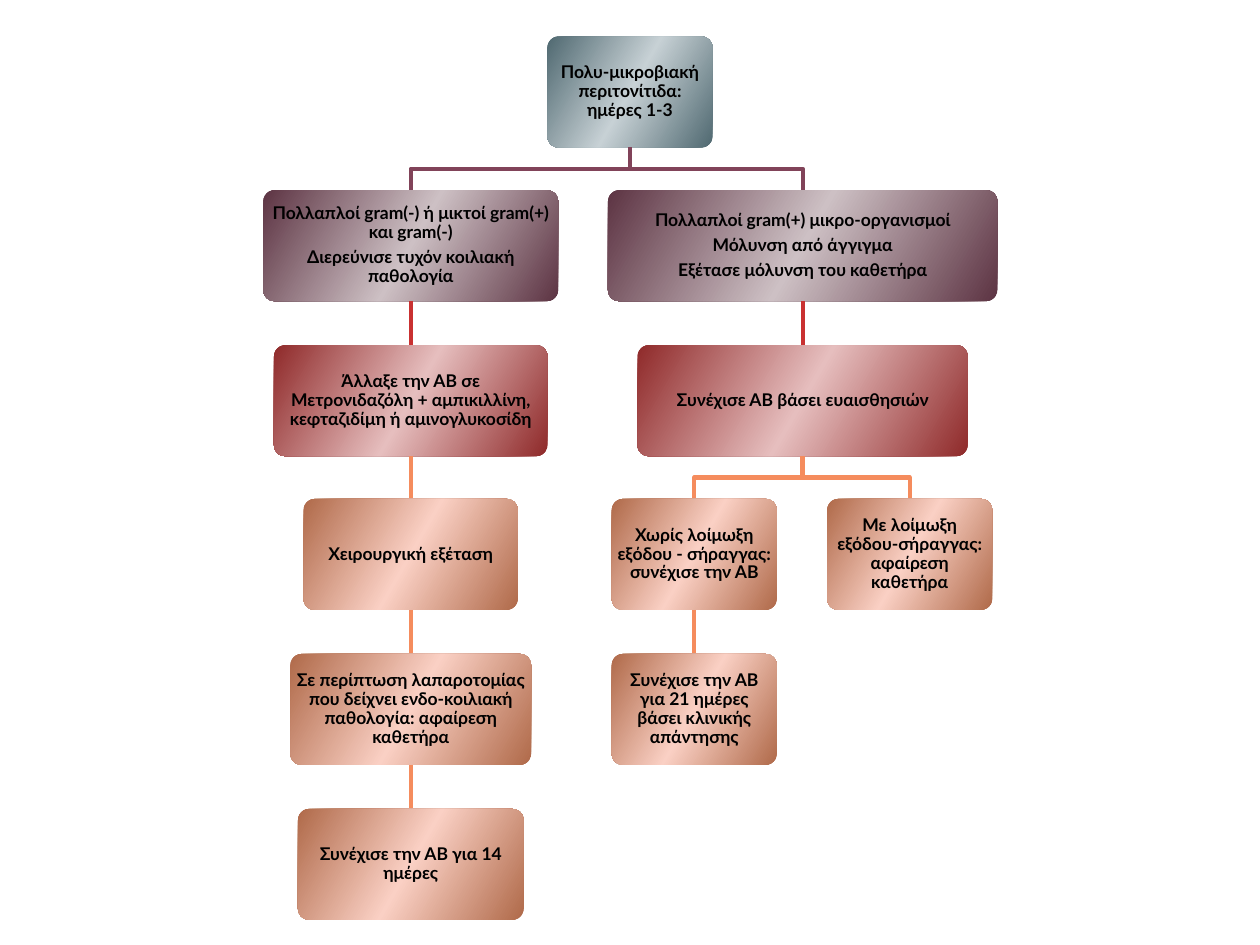
"""Draw the decision tree for polymicrobial peritonitis."""
from copy import deepcopy

from pptx import Presentation
from pptx import util as u
from pptx.dml.color import RGBColor
from pptx.enum import shapes, text
from pptx.oxml.ns import qn

BLACK = RGBColor(0x00, 0x00, 0x00)
TEAL = (RGBColor(0x50, 0x69, 0x71), RGBColor(0xC7, 0xD1, 0xD5))
PLUM = (RGBColor(0x5D, 0x34, 0x43), RGBColor(0xCD, 0xC0, 0xC4))
RED = (RGBColor(0x8F, 0x2A, 0x2A), RGBColor(0xE6, 0xBE, 0xBE))
ORANGE = (RGBColor(0xB0, 0x6A, 0x4A), RGBColor(0xFA, 0xD0, 0xC4))
PLUM_LINE = RGBColor(0x81, 0x43, 0x59)
RED_LINE = RGBColor(0xC9, 0x31, 0x31)
ORANGE_LINE = RGBColor(0xF5, 0x8C, 0x5D)

LEVEL_FILLS = [TEAL, PLUM, RED, ORANGE, ORANGE, ORANGE]
LEVEL_LINES = [None, PLUM_LINE, RED_LINE, ORANGE_LINE, ORANGE_LINE, ORANGE_LINE]

LEVEL_TOPS = [0.29, 1.51, 2.74, 3.96, 5.19, 6.42]
HEIGHT = 0.88
ROOT, LEFT, RIGHT, CLEAR, INFECTED = 5, 3.26, 6.37, 5.51, 7.22
NARROW = 1.31

STEPS = [
    (0, ROOT, NARROW, None, ["Πολυ-μικροβιακή περιτονίτιδα: ημέρες 1-3"]),
    (1, LEFT, 2.34, ROOT, ["Πολλαπλοί gram(-) ή μικτοί gram(+) και gram(-)",
                           "Διερεύνισε τυχόν κοιλιακή παθολογία"]),
    (2, LEFT, 2.17, LEFT, ["Άλλαξε την ΑΒ σε Μετρονιδαζόλη + αμπικιλλίνη, "
                           "κεφταζιδίμη ή αμινογλυκοσίδη"]),
    (3, LEFT, 1.7, LEFT, ["Χειρουργική εξέταση"]),
    (4, LEFT, 1.91, LEFT, ["Σε περίπτωση λαπαροτομίας που δείχνει ενδο-κοιλιακή "
                           "παθολογία: αφαίρεση καθετήρα"]),
    (5, LEFT, 1.79, LEFT, ["Συνέχισε την ΑΒ για 14 ημέρες"]),
    (1, RIGHT, 3.09, ROOT, ["Πολλαπλοί gram(+) μικρο-οργανισμοί",
                            "Μόλυνση από άγγιγμα",
                            "Εξέτασε μόλυνση του καθετήρα"]),
    (2, RIGHT, 2.62, RIGHT, ["Συνέχισε ΑΒ βάσει ευαισθησιών"]),
    (3, CLEAR, NARROW, RIGHT, ["Χωρίς λοίμωξη εξόδου - σήραγγας: συνέχισε την ΑΒ"]),
    (4, CLEAR, NARROW, CLEAR, ["Συνέχισε την ΑΒ για 21 ημέρες βάσει κλινικής απάντησης"]),
    (3, INFECTED, NARROW, RIGHT, ["Με λοίμωξη εξόδου-σήραγγας: αφαίρεση καθετήρα"]),
]


def add_link(page, level, parent, centre):
    start, end = LEVEL_TOPS[level - 1] + HEIGHT, LEVEL_TOPS[level]
    middle = (start + end) / 2
    bends = [] if parent == centre else [(parent, middle), (centre, middle)]
    first, *rest = [(u.Inches(x), u.Inches(y))
                    for x, y in [(parent, start), *bends, (centre, end)]]
    builder = page.shapes.build_freeform(*first)
    builder.add_line_segments(rest, close=False)
    link = builder.convert_to_shape()
    link.shadow.inherit = False
    link.fill.background()
    link.line.color.rgb = LEVEL_LINES[level]
    link.line.width = u.Pt(2.36)


def fill_gradient(box, edge, middle):
    box.fill.gradient()
    box.fill.gradient_angle = 330
    stop_list = box._element.spPr.find(".//" + qn("a:gsLst"))
    stop_list.append(deepcopy(stop_list[0]))
    for stop, position, colour in zip(box.fill.gradient_stops, (0, 0.5, 1),
                                      (edge, middle, edge)):
        stop.position = position
        stop.color.rgb = colour


def add_step(page, level, centre, width, paragraphs):
    box = page.shapes.add_shape(
        shapes.MSO_SHAPE.ROUNDED_RECTANGLE,
        *map(u.Inches, (centre - width / 2, LEVEL_TOPS[level], width, HEIGHT)))
    box.adjustments[0] = 0.1
    box.shadow.inherit = False
    box.line.fill.background()
    fill_gradient(box, *LEVEL_FILLS[level])
    frame = box.text_frame
    frame.word_wrap = True
    frame.vertical_anchor = text.MSO_ANCHOR.MIDDLE
    frame.margin_left = frame.margin_right = u.Inches(0.01)
    frame.margin_top = frame.margin_bottom = u.Inches(0.01)
    for index, words in enumerate(paragraphs):
        para = frame.add_paragraph() if index else frame.paragraphs[0]
        para.alignment = text.PP_ALIGN.CENTER
        para.line_spacing = 0.9
        para.space_after = u.Pt(3.5)
        span = para.add_run()
        span.text = words
        span.font.name = "Lato"
        span.font.size = u.Pt(10)
        span.font.bold = True
        span.font.color.rgb = BLACK


def main():
    deck = Presentation()
    deck.slide_width, deck.slide_height = u.Inches(10), u.Inches(7.5)
    page = deck.slides.add_slide(deck.slide_layouts[6])
    for level, centre, width, parent, paragraphs in STEPS:
        if parent is not None:
            add_link(page, level, parent, centre)
        add_step(page, level, centre, width, paragraphs)
    deck.save("out.pptx")


if __name__ == "__main__":
    main()
